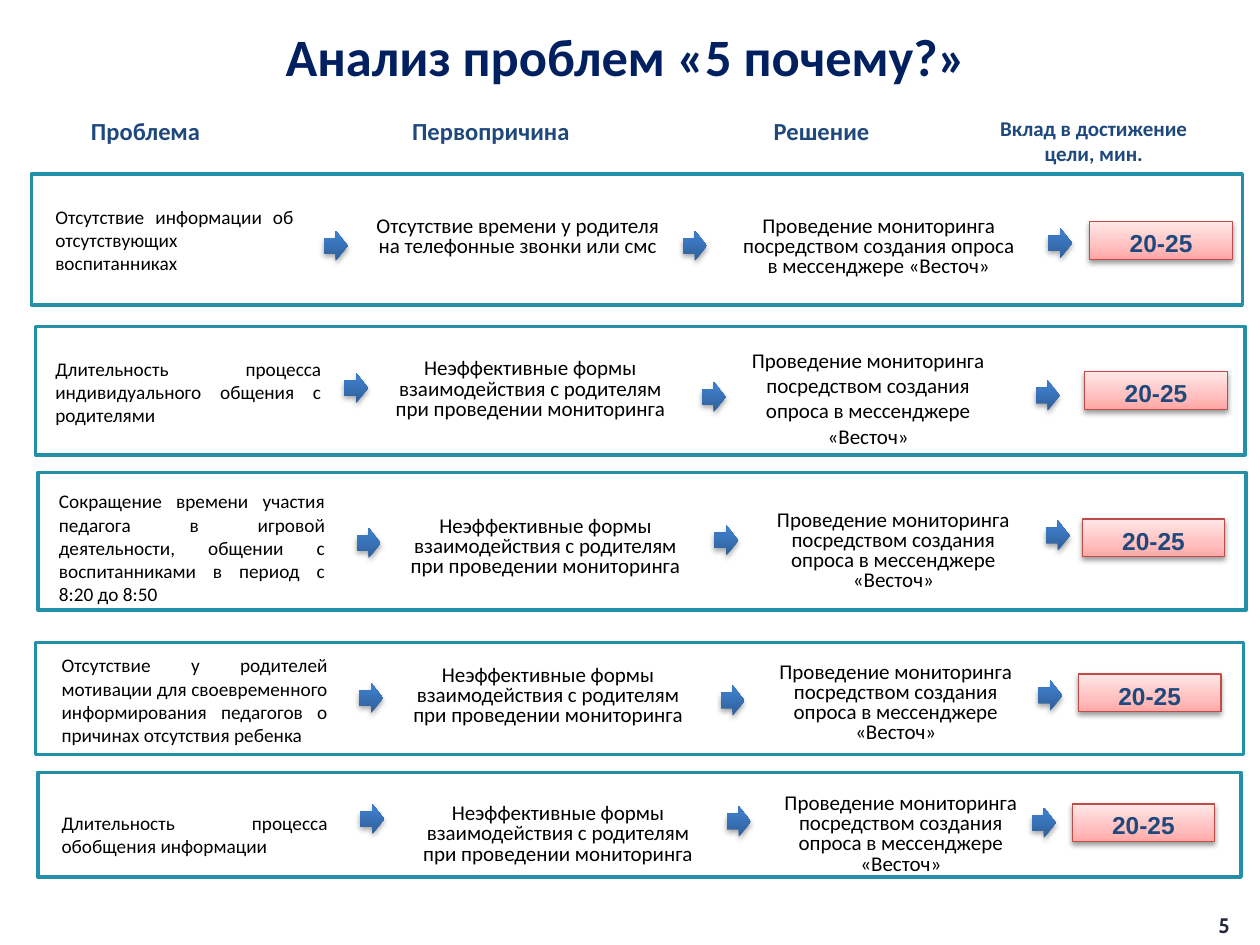
from lxml import etree
from pptx import Presentation
from pptx import util as u
from pptx.dml.color import RGBColor
from pptx.enum import shapes, text
from pptx.oxml.ns import qn

FONT, NAVY, BLUE, TEAL, BLACK = "Calibri", "002060", "1F497D", "248FA8", "000000"
ARROW_STOPS = [(0, "2F5F99"), (80, "3D7CC7"), (100, "3A7CCB")]
BADGE_STOPS = [(0, "FFA6A5"), (35, "FFC0BF"), (100, "FFE7E7")]
CENTER, JUSTIFY = text.PP_ALIGN.CENTER, text.PP_ALIGN.JUSTIFY
TOP, MIDDLE = text.MSO_ANCHOR.TOP, text.MSO_ANCHOR.MIDDLE

CAUSE = "Неэффективные формы взаимодействия с родителям при проведении мониторинга"
SOLUTION = ("Проведение мониторинга посредством создания опроса "
            "в мессенджере «Весточ»")

# Column headings: text, box, size
HEADINGS = [
    ("Проблема", (17.3, 62.6, 131.8, 21.6), 14),
    ("Первопричина", (214.6, 62.6, 131.8, 21.6), 14),
    ("Решение", (406.8, 62.6, 125.3, 21.6), 14),
    ("Вклад в достижение цели, мин.", (553.7, 62.6, 142.6, 33.8), 12),
]

# Rows: boxes are left, top, width, height; arrows and badge are left, top
ROWS = [
    dict(frame=(18, 99.4, 691.9, 74.9),
         problem=("Отсутствие информации об отсутствующих воспитанниках",
                  (24.5, 110.2, 150.5, 47.5)),
         cause=("Отсутствие времени у родителя на телефонные звонки или смс",
                (205.2, 111.6, 181.4, 42.5)),
         solution=(414.7, 111.6, 175, 54), badge=(622.8, 126.7),
         arrows=[(185, 131.8), (390.2, 131.8), (599, 130.3)]),
    dict(frame=(20.2, 186.5, 691.2, 73.4),
         problem=("Длительность процесса индивидуального общения с родителями",
                  (24.5, 197.3, 166.3, 47.5)),
         cause=(CAUSE, (212.4, 198.7, 181.4, 42.5)),
         solution=(414, 191.5, 164.2, 66), spacing=1, badge=(619.9, 212.4),
         arrows=[(196.6, 213.1), (401, 218.2), (591.8, 217.4)]),
    dict(frame=(21.6, 270, 690.5, 78.5),
         problem=("Сокращение времени участия педагога в игровой деятельности, "
                  "общении с воспитанниками в период с 8:20 до 8:50",
                  (26.6, 272.9, 166.3, 74.2)),
         cause=(CAUSE, (226.8, 288.7, 169.9, 42.5)),
         solution=(427, 285.1, 167, 54), badge=(618.5, 296.6),
         arrows=[(203.8, 301.7), (408.2, 300.2), (597.6, 297.4)]),
    dict(frame=(20.2, 367.2, 690.5, 64.1),
         problem=("Отсутствие у родителей мотивации для своевременного "
                  "информирования педагогов о причинах отсутствия ребенка",
                  (28.1, 353.5, 166.3, 87.1)),
         cause=(CAUSE, (222.5, 373.7, 181.4, 42.5)),
         solution=(429.1, 372.2, 165.6, 54), badge=(616.3, 385.2),
         arrows=[(205.2, 390.2), (411.8, 391.7), (593.3, 388.8)]),
    dict(frame=(21.6, 441.4, 687.6, 59.8),
         problem=("Длительность процесса обобщения информации",
                  (28.1, 457.2, 166.3, 33.8)),
         cause=(CAUSE, (228.2, 452.9, 181.4, 42.5)),
         solution=(434.9, 447.1, 159.8, 54), badge=(612.7, 459.4),
         arrows=[(205.9, 459.4), (415.4, 460.8), (589.7, 461.5)]),
]


def rgb(color):
    return RGBColor.from_string(color)


def pts(box):
    return [u.Pt(v) for v in box]


def write(sp, words, size=12, color=BLACK, bold=False, font=FONT, align=CENTER,
          anchor=MIDDLE, spacing=1, insets=(7.2, 6.5, 7.2, 0.7)):
    tf = sp.text_frame
    tf.word_wrap = True
    tf.auto_size = text.MSO_AUTO_SIZE.NONE
    tf.vertical_anchor = anchor
    tf.margin_left, tf.margin_top, tf.margin_right, tf.margin_bottom = pts(insets)
    p = tf.paragraphs[0]
    p.alignment, p.line_spacing = align, spacing
    r = p.add_run()
    r.text = words
    r.font.name, r.font.size, r.font.bold = font, u.Pt(size), bold
    r.font.color.rgb = rgb(color)


def add_text(s, words, box, **fmt):
    write(s.shapes.add_textbox(*pts(box)), words, **fmt)


def add_shape(s, kind, box, line=None, width=1):
    sp = s.shapes.add_shape(kind, *pts(box))
    sp.shadow.inherit = False
    if line:
        sp.line.color.rgb = rgb(line)
        sp.line.width = u.Pt(width)
    else:
        sp.line.fill.background()
    return sp


def color_node(parent, color):
    return etree.SubElement(parent, qn("a:srgbClr"), val=color)


def shade(sp, stops, blur, dist, alpha):
    """Vertical gradient running upwards, with a soft shadow below."""
    sp.fill.gradient()
    sp.fill.gradient_angle = 90
    pr = sp._element.spPr
    gs_list = pr.find(qn("a:gradFill")).find(qn("a:gsLst"))
    for gs in list(gs_list):
        gs_list.remove(gs)
    for pos, color in stops:
        color_node(etree.SubElement(gs_list, qn("a:gs"), pos=str(pos * 1000)), color)
    shadow = etree.SubElement(
        pr.find(qn("a:effectLst")), qn("a:outerShdw"), blurRad=str(u.Pt(blur)),
        dist=str(u.Pt(dist)), dir="5400000", rotWithShape="0")
    etree.SubElement(color_node(shadow, BLACK), qn("a:alpha"), val=str(alpha * 1000))


def add_arrow(s, left, top):
    sp = add_shape(s, shapes.MSO_SHAPE.RIGHT_ARROW, (left, top, 13.7, 17.3))
    shade(sp, ARROW_STOPS, 3.1, 1.8, 35)


def add_badge(s, left, top):
    sp = add_shape(s, shapes.MSO_SHAPE.RECTANGLE, (left, top, 81.4, 21.6),
                   line="BF4C48", width=0.75)
    shade(sp, BADGE_STOPS, 3.1, 1.6, 38)
    write(sp, "20-25", size=14, color=BLUE, bold=True, font="Arial", spacing=0.8)


def add_row(s, row):
    frame = add_shape(s, shapes.MSO_SHAPE.RECTANGLE, row["frame"], line=TEAL, width=2)
    frame.fill.background()
    add_text(s, *row["problem"], size=11, align=JUSTIFY)
    add_text(s, *row["cause"], spacing=0.8)
    add_text(s, SOLUTION, row["solution"], spacing=row.get("spacing", 0.8))
    for left, top in row["arrows"]:
        add_arrow(s, left, top)
    add_badge(s, *row["badge"])


def main():
    prs = Presentation()
    prs.slide_width, prs.slide_height = u.Pt(720), u.Pt(540)
    s = prs.slides.add_slide(prs.slide_layouts[5])

    # Title
    title = s.shapes.title
    title.left, title.top, title.width, title.height = pts((15.8, 15.1, 684, 33.1))
    write(title, "Анализ проблем «5 почему?»", size=30, color=NAVY, bold=True,
          insets=(0, 0, 0, 0))

    # Column headings
    for words, box, size in HEADINGS:
        add_text(s, words, box, size=size, color=BLUE, bold=True, anchor=TOP,
                 insets=(7.2, 3.6, 7.2, 0.7))

    # Chains from problem to contribution
    for row in ROWS:
        add_row(s, row)

    # Slide number
    add_text(s, "5", (681.8, 517.7, 35.3, 22.3), color="23263C", bold=True,
             font="Cabin", insets=(0, 0, 0, 0))
    prs.save("out.pptx")


if __name__ == "__main__":
    main()
